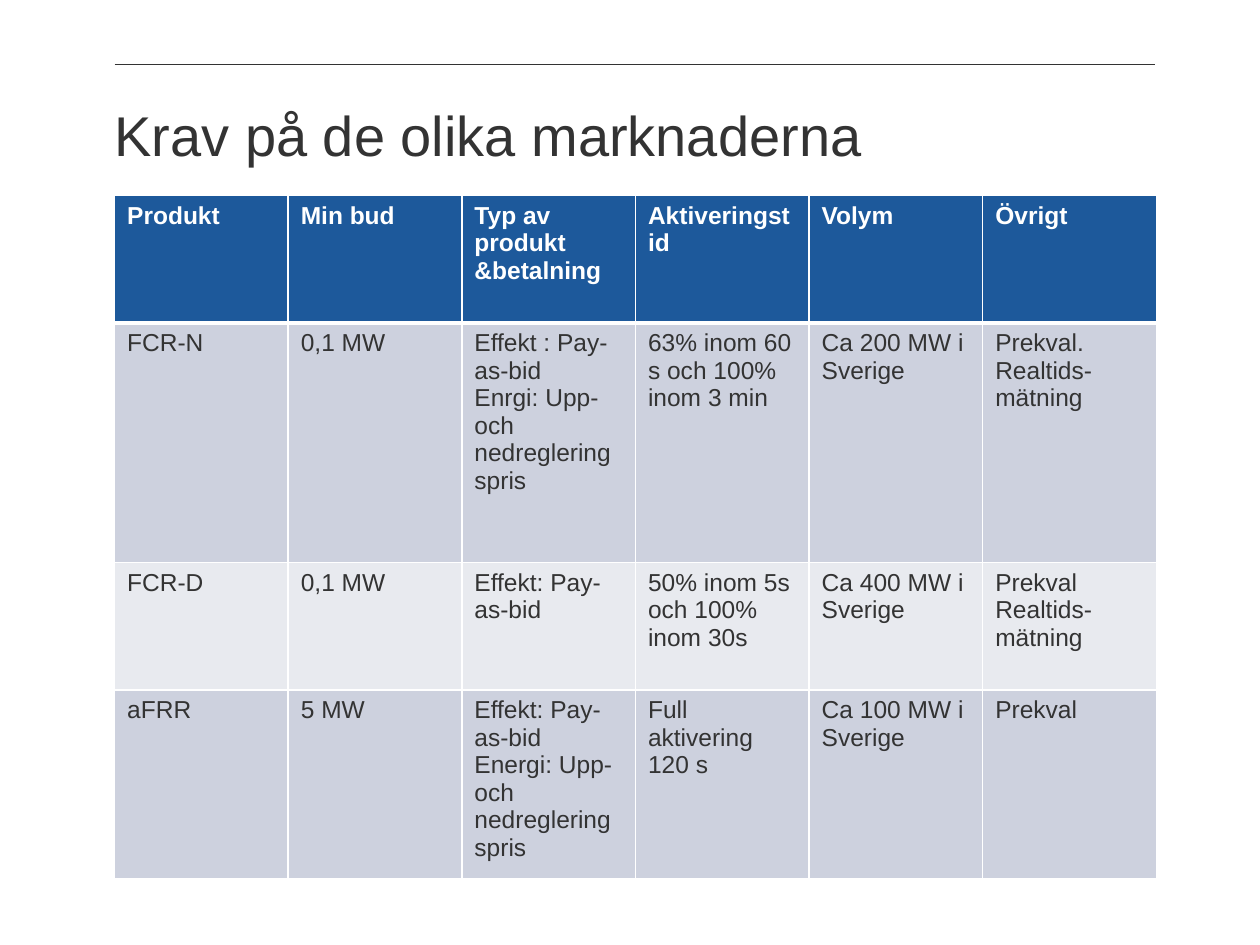
import pptx
import pptx.dml.color
import pptx.enum.shapes
import pptx.oxml.ns
import pptx.util
from lxml import etree
from pptx.util import Cm

DARK = pptx.dml.color.RGBColor(0x33, 0x33, 0x33)
WHITE = pptx.dml.color.RGBColor(0xFF, 0xFF, 0xFF)
HEADER_BLUE = pptx.dml.color.RGBColor(0x1D, 0x59, 0x9B)
BAND_DARK = pptx.dml.color.RGBColor(0xCD, 0xD1, 0xDE)
BAND_LIGHT = pptx.dml.color.RGBColor(0xE8, 0xEA, 0xEF)

LEFT = Cm(2.31)
COLUMN_WIDTH = Cm(3.5)
ROW_HEIGHTS = [Cm(2.57), Cm(4.83), Cm(2.57), Cm(3.58)]
ROW_FILLS = [HEADER_BLUE, BAND_DARK, BAND_LIGHT, BAND_DARK]

REQUIREMENTS = [
    ["Produkt", "Min bud", "Typ av produkt &betalning", "Aktiveringstid", "Volym", "Övrigt"],
    ["FCR-N", "0,1 MW", "Effekt : Pay-as-bid\nEnrgi: Upp- och nedregleringspris",
     "63% inom 60 s och 100% inom 3 min", "Ca 200 MW i Sverige", "Prekval.\nRealtids-mätning"],
    ["FCR-D", "0,1 MW", "Effekt: Pay-as-bid",
     "50% inom 5s och 100% inom 30s", "Ca 400 MW i Sverige", "Prekval\nRealtids-mätning"],
    ["aFRR", "5 MW", "Effekt: Pay-as-bid\nEnergi: Upp- och nedregleringspris",
     "Full aktivering 120 s", "Ca 100 MW i Sverige", "Prekval"],
]


def style_font(font, color, **values):
    font.color.rgb = color
    for name, value in values.items():
        setattr(font, name, value)


def set_borders(cell, widths):
    """Draw white cell borders; widths maps lnL, lnR, lnT, lnB, in that order, to points."""
    properties = cell._tc.get_or_add_tcPr()
    for position, (side, width) in enumerate(widths.items()):
        border = etree.Element(pptx.oxml.ns.qn("a:" + side), w=str(pptx.util.Pt(width)))
        fill = etree.SubElement(border, pptx.oxml.ns.qn("a:solidFill"))
        etree.SubElement(fill, pptx.oxml.ns.qn("a:srgbClr"), val=str(WHITE))
        properties.insert(position, border)


presentation = pptx.Presentation()
presentation.slide_width = Cm(25.4)
presentation.slide_height = Cm(19.05)
slide = presentation.slides.add_slide(presentation.slide_layouts[6])

# Rule above the title
rule = slide.shapes.add_connector(
    pptx.enum.shapes.MSO_CONNECTOR.STRAIGHT, LEFT, Cm(1.3), Cm(23.29), Cm(1.3))
rule.line.color.rgb = DARK
rule.line.width = pptx.util.Pt(0.5)
etree.SubElement(rule._element.spPr, pptx.oxml.ns.qn("a:effectLst"))

# Title
title = slide.shapes.add_textbox(LEFT, Cm(1.9), Cm(21), Cm(3)).text_frame
title_format = {"word_wrap": True, "margin_left": 0, "margin_top": 0,
                "margin_right": 0, "margin_bottom": 0}
for name, value in title_format.items():
    setattr(title, name, value)
title.text = "Krav på de olika marknaderna"
title.paragraphs[0].line_spacing = 1.1
style_font(title.paragraphs[0].font, DARK, name="Arial", size=pptx.util.Pt(32))

# Market requirements
column_count = len(REQUIREMENTS[0])
table = slide.shapes.add_table(
    len(REQUIREMENTS), column_count, LEFT, Cm(3.94),
    COLUMN_WIDTH * column_count, sum(ROW_HEIGHTS)).table
for column in table.columns:
    column.width = COLUMN_WIDTH

for row_index, row_texts in enumerate(REQUIREMENTS):
    is_header = row_index == 0
    table.rows[row_index].height = ROW_HEIGHTS[row_index]
    border_widths = {"lnL": 1, "lnR": 1,
                     "lnT": 3 if row_index == 1 else 1,
                     "lnB": 3 if is_header else 1}
    for column_index, text in enumerate(row_texts):
        cell = table.cell(row_index, column_index)
        cell.text = text
        cell.fill.solid()
        cell.fill.fore_color.rgb = ROW_FILLS[row_index]
        set_borders(cell, border_widths)
        for paragraph in cell.text_frame.paragraphs:
            style_font(paragraph.font, WHITE if is_header else DARK,
                       name="Arial", size=pptx.util.Pt(14), bold=is_header)

presentation.save("out.pptx")
